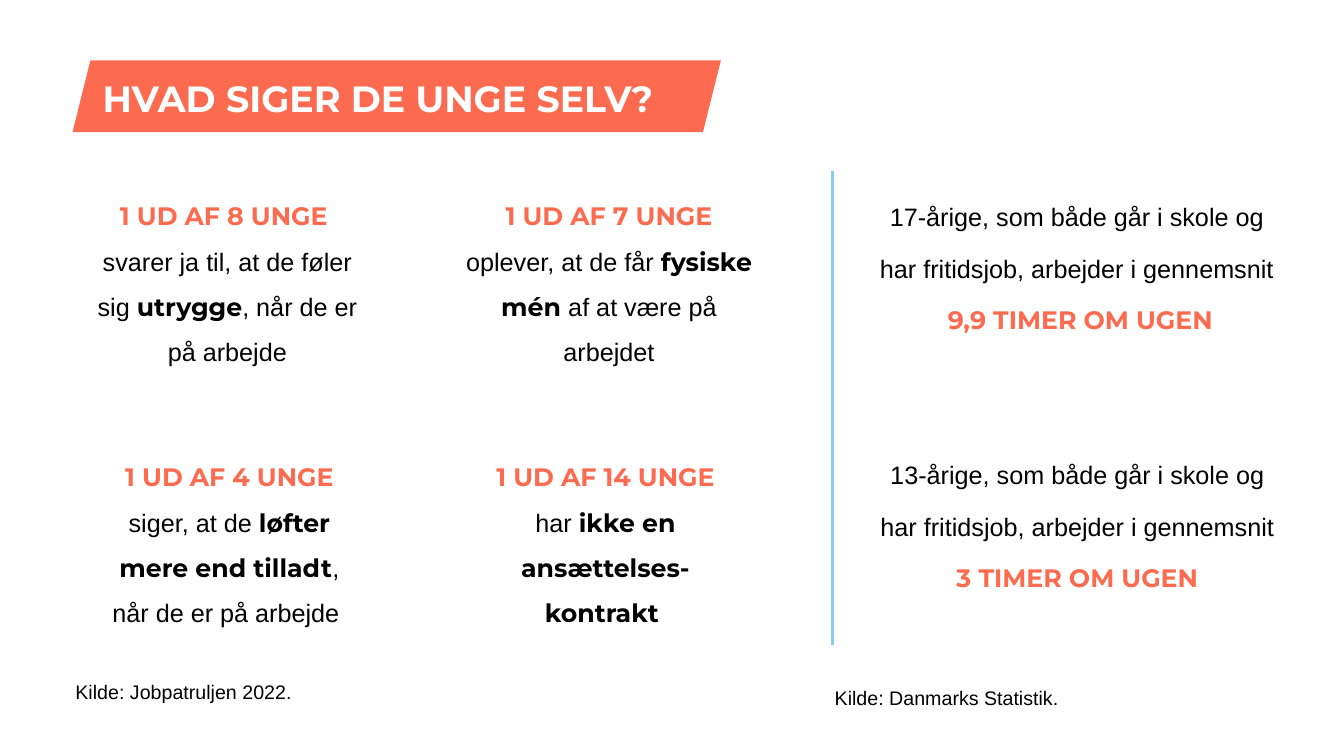
from dataclasses import dataclass

from lxml import etree
from pptx import Presentation, util as u
from pptx.dml.color import RGBColor
from pptx.enum import shapes, text
from pptx.oxml.ns import qn


@dataclass(frozen=True)
class Theme:
    """Colours, fonts and type sizes of the slide."""
    coral: str = "FC6B4F"
    blue: str = "85CFEA"
    black: str = "000000"
    white: str = "FFFFFF"
    display: str = "Montserrat"
    plain: str = "Arial"
    title: int = 26
    body: int = 18
    source: int = 14

    def fmt(self, kind):
        """Return the font values and colour for a kind of run."""
        name, size, bold, color = {
            "title": (self.display, self.title, True, self.white),
            "key": (self.display, self.body, True, self.coral),
            "strong": (self.display, self.body, True, self.black),
            "body": (self.plain, self.body, False, self.black),
            "source": (self.plain, self.source, False, self.black),
        }[kind]
        return {"name": name, "size": u.Pt(size), "bold": bold}, color


class Deck:
    """Draws each kind of element on the current slide."""

    def __init__(self, prs, theme):
        """Add a blank slide to the presentation."""
        self.theme = theme
        self.s = prs.slides.add_slide(prs.slide_layouts[6])

    def text(self, box, runs, spacing=1.0, align="LEFT", anchor="TOP"):
        """Add a text box with one paragraph of (kind, text) runs."""
        tf = self.s.shapes.add_textbox(*map(u.Inches, box)).text_frame
        frame = {"word_wrap": True,
                 "vertical_anchor": getattr(text.MSO_ANCHOR, anchor)}
        para = {"alignment": getattr(text.PP_ALIGN, align),
                "line_spacing": spacing}
        p = tf.paragraphs[0]
        for target, values in ((tf, frame), (p, para)):
            for key, value in values.items():
                setattr(target, key, value)
        for kind, words in runs:
            for i, line in enumerate(words.split("\n")):
                if i:
                    p.add_line_break()
                if line:
                    self.run(p, kind, line)

    def run(self, p, kind, line):
        """Add one formatted run to a paragraph."""
        r = p.add_run()
        r.text = line
        values, color = self.theme.fmt(kind)
        for key, value in values.items():
            setattr(r.font, key, value)
        r.font.color.rgb = RGBColor.from_string(color)

    def banner(self, box):
        """Add the slanted title background."""
        sp = self.s.shapes.add_shape(
            shapes.MSO_SHAPE.PARALLELOGRAM, *map(u.Inches, box))
        sp.shadow.inherit = False
        sp.fill.solid()
        sp.fill.fore_color.rgb = RGBColor.from_string(self.theme.coral)
        sp.line.fill.background()

    def divider(self, x, top, bottom):
        """Add a vertical rule."""
        line = self.s.shapes.add_connector(
            shapes.MSO_CONNECTOR.STRAIGHT, *map(u.Inches, (x, top, x, bottom)))
        line.line.color.rgb = RGBColor.from_string(self.theme.blue)
        line.line.width = u.Pt(2)
        etree.SubElement(line._element.spPr, qn("a:effectLst"))


FINDINGS = [
    ((0.75, 1.79, 3.01, 1.86),
     [("key", "1 UD AF 8 UNGE \n"), ("body", "svarer ja til, at de føler sig "),
      ("strong", "utrygge"), ("body", ", når de er på arbejde")]),
    ((4.45, 1.79, 3.18, 1.86),
     [("key", "1 UD AF 7 UNGE "), ("body", "oplever, at de får "),
      ("strong", "fysiske mén "), ("body", "af at være på arbejdet")]),
    ((0.92, 4.38, 2.71, 1.86),
     [("key", "1 UD AF 4 UNGE\n"), ("body", "siger, at de "),
      ("strong", "løfter mere end tilladt"),
      ("body", ", når de er på arbejde ")]),
    ((4.65, 4.38, 2.71, 1.86),
     [("key", "1 UD AF 14 UNGE\n"), ("body", "har "),
      ("strong", "ikke en ansættelses-\nkontrakt ")]),
]
HOURS = [
    ((8.18, 1.74, 5.07, 1.86),
     [("body", "17-årige, som både går i skole og \n"
               "har fritidsjob, arbejder i gennemsnit \n"),
      ("key", "9,9 TIMER OM UGEN")]),
    ((8.62, 4.3, 4.13, 1.58),
     [("body", "13-årige, som både går i skole og "
               "har fritidsjob, arbejder i gennemsnit "),
      ("key", "3 TIMER OM UGEN")]),
]


def main():
    """Build and save the slide."""
    prs = Presentation()
    prs.slide_width, prs.slide_height = u.Inches(13.33), u.Inches(7.5)
    deck = Deck(prs, Theme())
    deck.banner((0.72, 0.6, 6.43, 0.71))
    deck.text((0.92, 0.6, 8.62, 0.79), [("title", "HVAD SIGER DE UNGE SELV?")],
              spacing=0.9, anchor="MIDDLE")
    for spacing, group in ((1.5, FINDINGS), (1.7, HOURS)):
        for box, runs in group:
            deck.text(box, runs, spacing, "CENTER")
    deck.text((0.65, 6.7, 6.5, 0.34), [("source", "Kilde: Jobpatruljen 2022.")])
    deck.text((8.18, 6.59, 2.62, 0.45),
              [("source", "Kilde: Danmarks Statistik.")], 1.7)
    deck.divider(8.26, 1.7, 6.4)
    prs.save("out.pptx")


if __name__ == "__main__":
    main()
